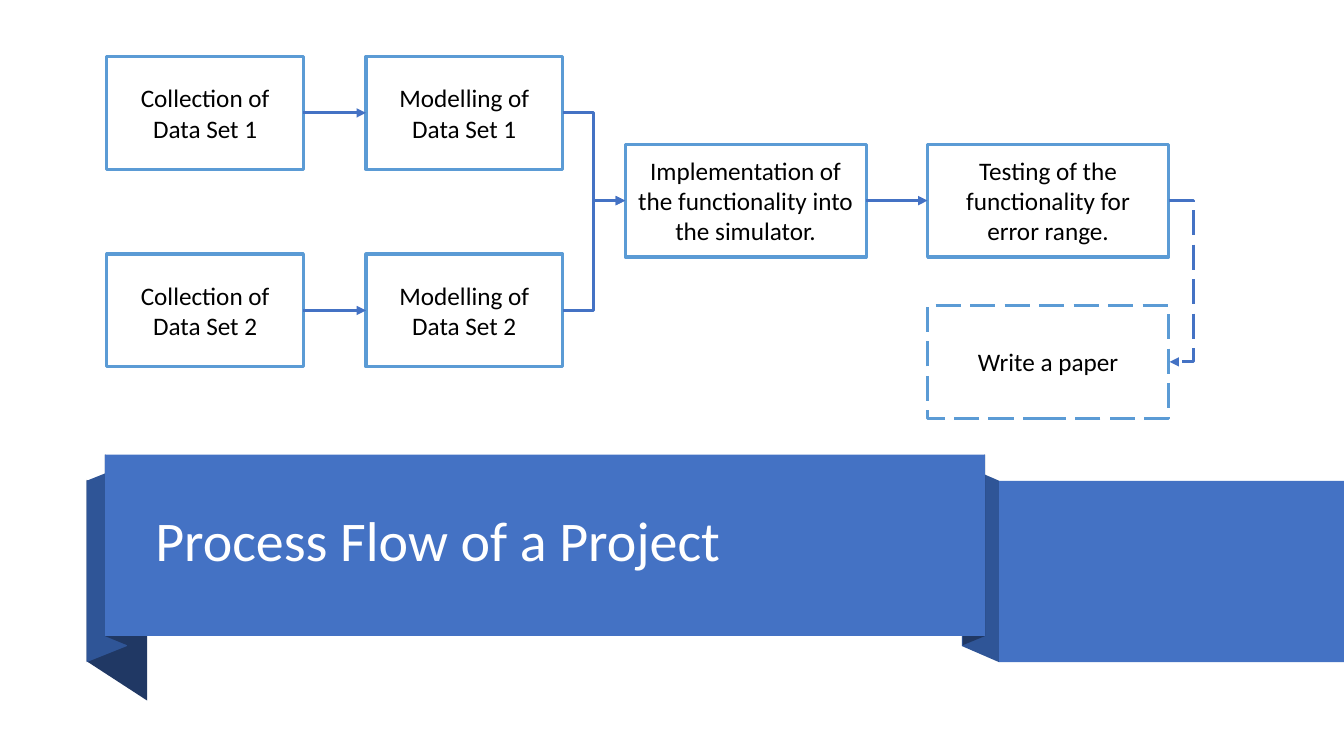
from lxml.etree import SubElement
from pptx import Presentation
from pptx.dml.color import RGBColor as Rgb
from pptx.enum.dml import MSO_LINE as Dash
from pptx.enum.shapes import MSO_CONNECTOR as Link, MSO_SHAPE as Kind
from pptx.enum.text import MSO_ANCHOR as Anchor, MSO_AUTO_SIZE as Fit, PP_ALIGN as Align
from pptx.oxml.ns import qn
from pptx.util import Inches, Pt

HUES = {"white": "FFFFFF", "black": "000000", "band": "4472C4",
        "fold": "2F5597", "shade": "203864", "edge": "5B9BD5"}
HUE = {name: Rgb.from_string(code) for name, code in HUES.items()}


def paint(shape, hue):
    """Give a shape a plain fill with no line and no shadow."""
    shape.shadow.inherit = False
    shape.fill.solid()
    shape.fill.fore_color.rgb = HUE[hue]
    shape.line.fill.background()


def style(frame, text, size, hue, align):
    """Set the text of a frame and format it."""
    frame.text = text
    frame.word_wrap = True
    frame.vertical_anchor = Anchor.MIDDLE
    para = frame.paragraphs[0]
    para.alignment = align
    font = para.runs[0].font
    font.name, font.size, font.color.rgb = "Calibri", Pt(size), HUE[hue]


deck = Presentation()
deck.slide_width, deck.slide_height = Inches(13.33), Inches(7.5)
slide = deck.slides.add_slide(deck.slide_layouts[5])
shapes = slide.shapes

# Ribbon folds: upright strips with slanted ends (left, top, right, top, hue)
BAND = 1.8
folds = [
    (0.86, 4.76, 1.46, 5.15, "shade"),
    (0.86, 4.77, 1.26, 4.61, "fold"),
    (1.04, 4.51, 1.26, 4.6, "shade"),
    (9.91, 4.77, 9.54, 4.61, "fold"),
    (9.77, 4.51, 9.55, 4.6, "shade"),
]
for x1, y1, x2, y2, hue in folds:
    ends = [(x1, y1), (x2, y2), (x2, y2 + BAND), (x1, y1 + BAND)]
    first, *rest = [(Inches(x), Inches(y)) for x, y in ends]
    pen = shapes.build_freeform(*first)
    pen.add_line_segments(rest, close=True)
    paint(pen.convert_to_shape(), hue)

# Ribbon faces, with the title on the front one
for x, y, wide in [(1.04, 4.51, 8.73), (9.91, 4.77, 3.42)]:
    face = shapes.add_shape(Kind.RECTANGLE, Inches(x), Inches(y), Inches(wide), Inches(BAND))
    paint(face, "band")

title = shapes.title
title.left, title.top, title.width, title.height = map(Inches, (1.44, 4.73, 8.15, 1.33))
style(title.text_frame, "Process Flow of a Project", 40, "white", Align.LEFT)
title.text_frame.auto_size = Fit.NONE
title.text_frame.paragraphs[0].line_spacing = 0.9
shapes._spTree.append(title._element)

# Process steps: column (left, width) and row (top)
COLS = [(1.06, 1.95), (3.63, 1.95), (6.2, 2.39), (9.2, 2.39)]
ROWS = {"one": 0.56, "mid": 1.43, "two": 2.52, "end": 3.03}
TALL = 1.12
steps = {
    "data1": (0, "one", "Collection of Data Set 1"),
    "data2": (0, "two", "Collection of Data Set 2"),
    "model1": (1, "one", "Modelling of Data Set 1"),
    "model2": (1, "two", "Modelling of Data Set 2"),
    "build": (2, "mid", "Implementation of the functionality into the simulator."),
    "test": (3, "mid", "Testing of the functionality for error range."),
    "paper": (3, "end", "Write a paper"),
}
boxes = {}
for key, (col, row, text) in steps.items():
    left, wide = COLS[col]
    box = shapes.add_shape(Kind.RECTANGLE, Inches(left), Inches(ROWS[row]),
                           Inches(wide), Inches(TALL))
    paint(box, "white")
    box.line.color.rgb, box.line.width = HUE["edge"], Pt(2.25)
    style(box.text_frame, text, 18, "black", Align.CENTER)
    boxes[key] = box
boxes["paper"].line.dash_style = Dash.LONG_DASH

# Arrows between the steps
LEFT, RIGHT = 1, 3
flows = [("data1", "model1", Link.STRAIGHT), ("data2", "model2", Link.STRAIGHT),
         ("model1", "build", Link.ELBOW), ("model2", "build", Link.ELBOW),
         ("build", "test", Link.STRAIGHT)]
arrows = []
for start, stop, kind in flows:
    arrow = shapes.add_connector(kind, 0, 0, 0, 0)
    arrow.begin_connect(boxes[start], RIGHT)
    arrow.end_connect(boxes[stop], LEFT)
    arrows.append(arrow)

# The last arrow loops out to the right and back
edge = sum(COLS[3])
loop = shapes.add_connector(
    Link.ELBOW, Inches(edge), Inches(ROWS["mid"] + TALL / 2),
    Inches(edge + 0.01), Inches(ROWS["end"] + TALL / 2))
loop.line.dash_style = Dash.LONG_DASH
bend = loop._element.spPr.find(qn("a:prstGeom")).get_or_add_avLst()
SubElement(bend, qn("a:gd"), name="adj1", fmla="val 2500000")
arrows.append(loop)

for arrow in arrows:
    arrow.line.color.rgb, arrow.line.width = HUE["band"], Pt(2.25)
    SubElement(arrow.line._get_or_add_ln(), qn("a:tailEnd"), type="triangle")
    SubElement(arrow._element.spPr, qn("a:effectLst"))

deck.save("out.pptx")
